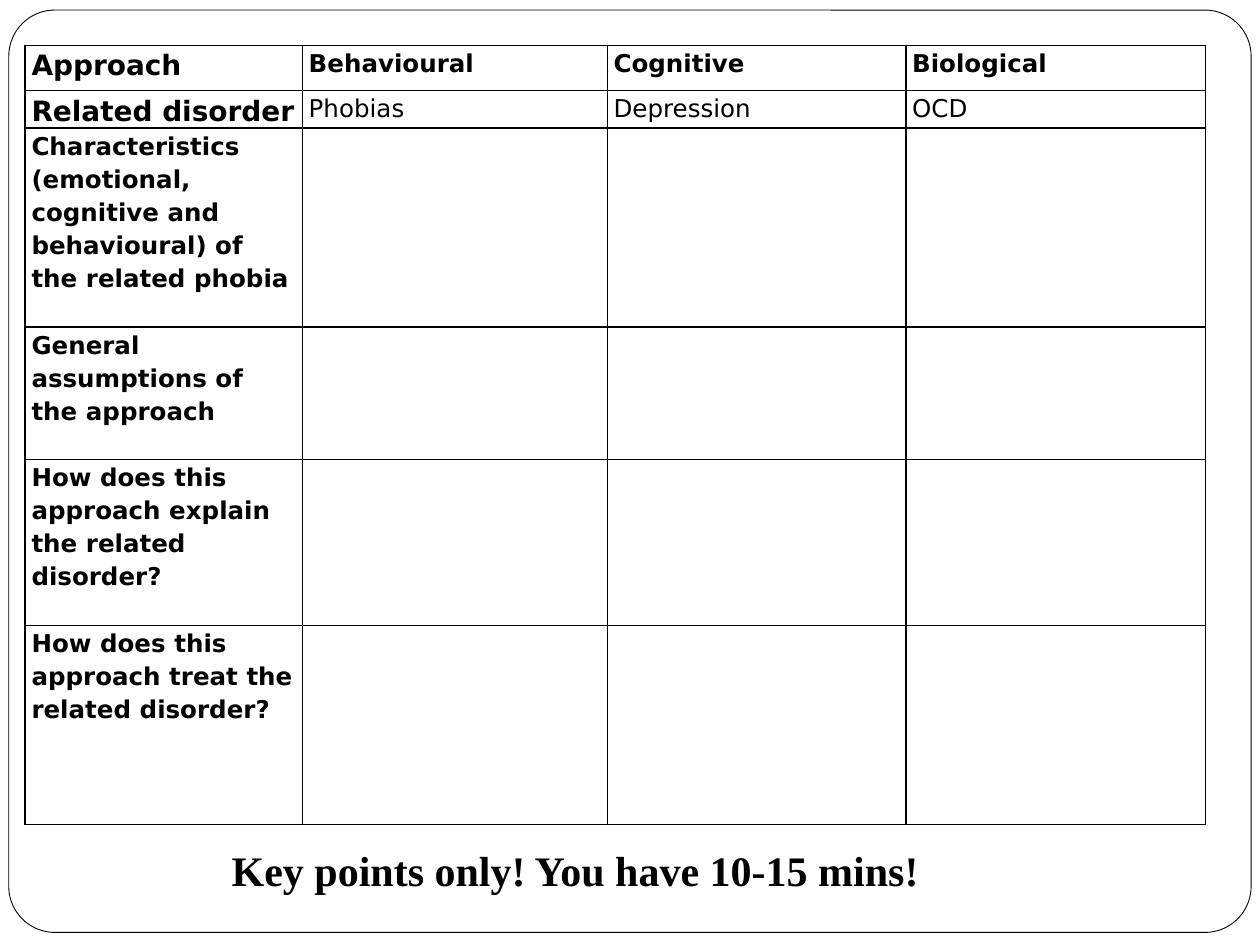
from lxml import etree
from pptx import Presentation, util as u
from pptx.dml.color import RGBColor
from pptx.enum import shapes, text
from pptx.oxml import ns

COLORS = {"ink": "000000", "paper": "FFFFFF"}
GRID_COLUMNS, GRID_ROWS = 100, 75
COLUMN_WIDTHS = [22, 24.2, 23.7, 23.8]
ROW_HEIGHTS = [3.6, 2.9, 15.8, 10.5, 13.2, 15.8]
HEADINGS = ["Behavioural", "Cognitive", "Biological"]
DISORDERS = ["Phobias", "Depression", "OCD"]
PROMPTS = [
    "Characteristics (emotional, cognitive and behavioural) of the related phobia",
    "General assumptions of the approach",
    "How does this approach explain the related disorder?",
    "How does this approach treat the related disorder?",
]


class Worksheet:
    table_font = "DejaVu Sans"
    caption_font = "Times New Roman"

    def __init__(self, presentation):
        self.column = presentation.slide_width / GRID_COLUMNS
        self.row = presentation.slide_height / GRID_ROWS
        self.slide = presentation.slides.add_slide(presentation.slide_layouts[6])

    def place(self, left, top, width, height):
        return (int(left * self.column), int(top * self.row),
                int(width * self.column), int(height * self.row))

    def color(self, name):
        return RGBColor.from_string(COLORS[name])

    def format_text(self, paragraph, font, size, bold):
        for run in paragraph.runs:
            run.font.name = font
            run.font.size = u.Pt(size)
            run.font.bold = bold
            run.font.color.rgb = self.color("ink")

    def frame(self, *box, corner):
        shape = self.slide.shapes.add_shape(
            shapes.MSO_SHAPE.ROUNDED_RECTANGLE, *self.place(*box))
        shape.adjustments[0] = corner
        shape.shadow.inherit = False
        shape.fill.solid()
        shape.fill.fore_color.rgb = self.color("paper")
        shape.line.color.rgb = self.color("ink")
        shape.line.width = u.Pt(0.5)

    def border(self, cell):
        properties = cell._tc.get_or_add_tcPr()
        for side in ("L", "R", "T", "B"):
            line = etree.SubElement(properties, ns.qn("a:ln" + side), w=str(u.Pt(1)))
            fill = etree.SubElement(line, ns.qn("a:solidFill"))
            etree.SubElement(fill, ns.qn("a:srgbClr"), val=COLORS["ink"])

    def cell(self, cell, words, size, bold):
        self.border(cell)
        cell.fill.background()
        cell.margin_left = cell.margin_right = u.Inches(0.05)
        cell.margin_top = cell.margin_bottom = 0
        cell.text_frame.text = words
        paragraph = cell.text_frame.paragraphs[0]
        paragraph.line_spacing = 1.15
        self.format_text(paragraph, self.table_font, size, bold)

    def table(self, left, top, contents):
        box = self.place(left, top, sum(COLUMN_WIDTHS), sum(ROW_HEIGHTS))
        table = self.slide.shapes.add_table(
            len(ROW_HEIGHTS), len(COLUMN_WIDTHS), *box).table
        table.first_row = table.horz_banding = False
        for column, width in zip(table.columns, COLUMN_WIDTHS):
            column.width = int(width * self.column)
        for row, height in zip(table.rows, ROW_HEIGHTS):
            row.height = int(height * self.row)
        for r, line in enumerate(contents):
            for c, words in enumerate(line):
                size = 16 if c == 0 and r < 2 else 14
                self.cell(table.cell(r, c), words, size, c == 0 or r == 0)

    def caption(self, words, *box):
        shape = self.slide.shapes.add_textbox(*self.place(*box))
        shape.text_frame.word_wrap = True
        shape.text_frame.auto_size = text.MSO_AUTO_SIZE.SHAPE_TO_FIT_TEXT
        shape.text_frame.text = words
        paragraph = shape.text_frame.paragraphs[0]
        paragraph.alignment = text.PP_ALIGN.CENTER
        self.format_text(paragraph, self.caption_font, 24, True)


def main():
    presentation = Presentation()
    presentation.slide_width = u.Inches(10)
    presentation.slide_height = u.Inches(7.5)
    worksheet = Worksheet(presentation)
    worksheet.frame(0.7, 0.8, 98.6, 73.2, corner=0.05)
    contents = [["Approach", *HEADINGS], ["Related disorder", *DISORDERS]]
    contents += [[prompt, "", "", ""] for prompt in PROMPTS]
    worksheet.table(2, 3.6, contents)
    worksheet.caption("Key points only! You have 10-15 mins!", 9.8, 66.5, 71.7, 5)
    presentation.save("out.pptx")


if __name__ == "__main__":
    main()
